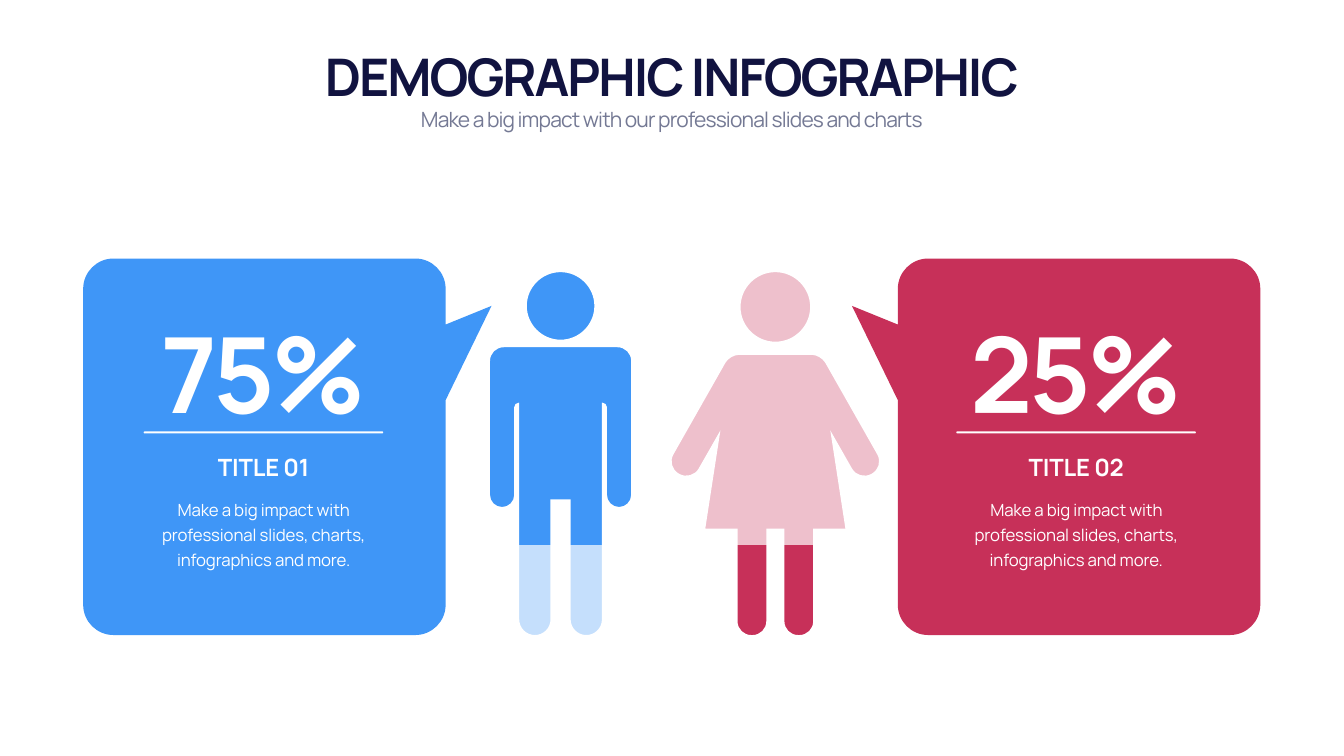
from lxml import etree
from pptx import Presentation
from pptx import util as u
from pptx.chart.data import CategoryChartData
from pptx.dml.color import RGBColor
from pptx.enum import chart as ch, shapes, text
from pptx.oxml import parse_xml
from pptx.oxml.ns import nsdecls, qn

HUES = {"blue": "3F96F7", "red": "C73059", "white": "FFFFFF",
        "navy": "111340", "gray": "747994"}
FONT = "Manrope"
WIDE, HIGH = 26.66, 15
TOP, LOW = text.MSO_ANCHOR.TOP, text.MSO_ANCHOR.BOTTOM
MID = text.MSO_ANCHOR.MIDDLE

HEADS = [
    ("DEMOGRAPHIC INFOGRAPHIC", (1.66, 0.82, 23.33, 1.35), LOW,
     {"size": 74, "bold": True}, "navy", -2.9),
    ("Make a big impact with our professional slides and charts",
     (1.66, 2.07, 23.33, 0.61), TOP, {"size": 30}, "gray", -1.2),
]
BLURB = "Make a big impact with professional slides, charts, infographics and more."
CARDS = [("75%", "TITLE 01", BLURB, "blue"), ("25%", "TITLE 02", BLURB, "red")]
ROWS = [
    (6.06, 2.63, MID, {"size": 150, "bold": True}, -5, None),
    (8.93, 0.67, LOW, {"size": 34, "bold": True}, -0.3, None),
    (9.76, 1.59, TOP, {"size": 24}, -0.2, 36),
]
STEP = 16.12
FLIP = 26.65

PEOPLE = [
    {"axis": 11.12, "half": 1.51, "hue": "blue", "alpha": (30, 100),
     "head": (6.07, 0.67),
     "body": [(1.4, 6.89, 0.27), (1.4, 10.06, 0.24), (0.92, 10.06, 0.24),
              (0.92, 7.99, 0.09), (0.82, 7.99, 0), (0.82, 12.6, 0.31),
              (0.2, 12.6, 0.31), (0.2, 9.91, 0)]},
    {"axis": 15.38, "half": 2.16, "hue": "red", "alpha": (100, 30),
     "head": (6.09, 0.69),
     "body": [(0.9, 7.04, 0.18), (2.16, 9.26, 0.28), (1.66, 9.54, 0.28),
              (1.09, 8.54, 0), (1.39, 10.49, 0), (0.75, 10.49, 0),
              (0.75, 12.6, 0.27), (0.18, 12.6, 0.27), (0.18, 10.49, 0)]},
]
BUBBLE = [(1.65, 5.13, 0.6), (8.84, 5.13, 0.6), (8.84, 6.44, 0), (9.75, 6.07, 0),
          (8.84, 7.94, 0), (8.84, 12.6, 0.6), (1.65, 12.6, 0.6)]


def cm(val):
    return u.Cm(val * 2.54)


def rgb(hue):
    return RGBColor.from_string(HUES[hue])


def paint(fill, hue, alpha=100):
    fill.solid()
    fill.fore_color.rgb = rgb(hue)
    if alpha < 100:
        tint = fill._xPr.find(qn("a:solidFill"))[0]
        etree.SubElement(tint, qn("a:alpha")).set("val", str(alpha * 1000))


def toward(start, end, dist):
    dx, dy = end[0] - start[0], end[1] - start[1]
    part = dist / (dx * dx + dy * dy) ** 0.5
    return cm(start[0] + dx * part), cm(start[1] + dy * part)


def bend(spots):
    steps = []
    for i, spot in enumerate(spots):
        cut = spot[2]
        prev, after = spots[i - 1], spots[(i + 1) % len(spots)]
        first = toward(spot, prev, cut)
        if not steps or max(abs(a - b) for a, b in zip(first, steps[-1][0])) > 9:
            steps.append((first, None))
        if cut:
            grips = toward(spot, prev, cut * 0.45), toward(spot, after, cut * 0.45)
            steps.append((toward(spot, after, cut), grips))
    return steps


def box(mid, half, top, low, cut=0):
    return [(mid - half, top, cut), (mid + half, top, cut),
            (mid + half, low, cut), (mid - half, low, cut)]


def style(shape, hue):
    shape.shadow.inherit = False
    shape.line.fill.background()
    paint(shape.fill, hue)


def draw(slide, loops, hue):
    pen, grips = None, []
    for loop in loops:
        spots, arcs = zip(*bend(loop))
        if pen is None:
            pen = slide.shapes.build_freeform(*spots[0])
        else:
            pen.move_to(*spots[0])
        pen.add_line_segments(spots[1:], close=True)
        grips += arcs[1:]
    shape = pen.convert_to_shape()
    for line, pair in zip(list(shape._element.iter(qn("a:lnTo"))), grips):
        if pair:
            line.tag = qn("a:cubicBezTo")
            for n, (x, y) in enumerate(pair):
                knot = etree.Element(qn("a:pt"), x=str(x - shape.left),
                                     y=str(y - shape.top))
                line.insert(n, knot)
    style(shape, hue)


def gauge(slide, who):
    data = CategoryChartData()
    data.categories = ["1"]
    data.add_series("Series 1", [25])
    data.add_series("Series 2", [75])
    half = who["half"] - 0.05
    place = map(cm, (who["axis"] - half, 5.35, 2 * half, 7.29))
    chart = slide.shapes.add_chart(
        ch.XL_CHART_TYPE.COLUMN_STACKED_100, *place, data).chart
    chart.has_legend = chart.has_title = False
    for key, val in {"name": FONT, "size": u.Pt(34), "bold": True}.items():
        setattr(chart.font, key, val)
    chart.font.color.rgb = rgb("white")
    for axis in (chart.category_axis, chart.value_axis):
        axis.visible = axis.has_major_gridlines = False
    plot = chart.plots[0]
    for key, val in {"gap_width": 0, "overlap": 100, "vary_by_categories": False}.items():
        setattr(plot, key, val)
    for series, alpha in zip(plot.series, who["alpha"]):
        paint(series.format.fill, who["hue"], alpha)
    area = chart._chartSpace.chart.plotArea
    for old in area.findall(qn("c:layout")):
        area.remove(old)
    parts = [("layoutTarget", "inner"), ("xMode", "edge"), ("yMode", "edge"),
             ("x", 0), ("y", 0), ("w", 1), ("h", 1)]
    tags = "".join(f'<c:{name} val="{val}"/>' for name, val in parts)
    area.insert(0, parse_xml(f'<c:layout {nsdecls("c")}><c:manualLayout>{tags}'
                             '</c:manualLayout></c:layout>'))


def person(slide, who):
    gauge(slide, who)
    axis, (mid, size) = who["axis"], who["head"]
    body = [(axis + x, y, cut) for x, y, cut in who["body"]]
    body += [(axis - x, y, cut) for x, y, cut in reversed(who["body"])]
    draw(slide, [body, box(axis, size, mid - size, mid + size, size),
                 box(axis, who["half"], 5.31, 12.69)], "white")


def write(slide, words, place, anchor, form, hue, gap, lead=None):
    frame = slide.shapes.add_textbox(*map(cm, place)).text_frame
    for key, val in {"word_wrap": True, "vertical_anchor": anchor,
                     "auto_size": text.MSO_AUTO_SIZE.SHAPE_TO_FIT_TEXT}.items():
        setattr(frame, key, val)
    para = frame.paragraphs[0]
    para.alignment = text.PP_ALIGN.CENTER
    if lead:
        para.line_spacing = u.Pt(lead)
    run = para.add_run()
    run.text = words
    for key, val in {"name": FONT, **form, "size": u.Pt(form["size"])}.items():
        setattr(run.font, key, val)
    run.font.color.rgb = rgb(hue)
    run._r.get_or_add_rPr().set("spc", str(round(gap * 100)))


def card(slide, i, item):
    *words, hue = item
    draw(slide, [[(FLIP - x if i else x, y, cut) for x, y, cut in BUBBLE]], hue)
    rule = slide.shapes.add_shape(shapes.MSO_SHAPE.ROUNDED_RECTANGLE,
                                  *map(cm, (2.85 + i * STEP, 8.56, 4.75, 0.04)))
    rule.adjustments[0] = 0.5
    style(rule, "white")
    for line, (top, tall, anchor, form, gap, lead) in zip(words, ROWS):
        write(slide, line, (2.79 + i * STEP, top, 4.88, tall), anchor, form,
              "white", gap, lead)


def main():
    deck = Presentation()
    deck.slide_width, deck.slide_height = cm(WIDE), cm(HIGH)
    slide = deck.slides.add_slide(deck.slide_layouts[6])
    for who in PEOPLE:
        person(slide, who)
    for i, item in enumerate(CARDS):
        card(slide, i, item)
    for head in HEADS:
        write(slide, *head)
    deck.save("out.pptx")


if __name__ == "__main__":
    main()
